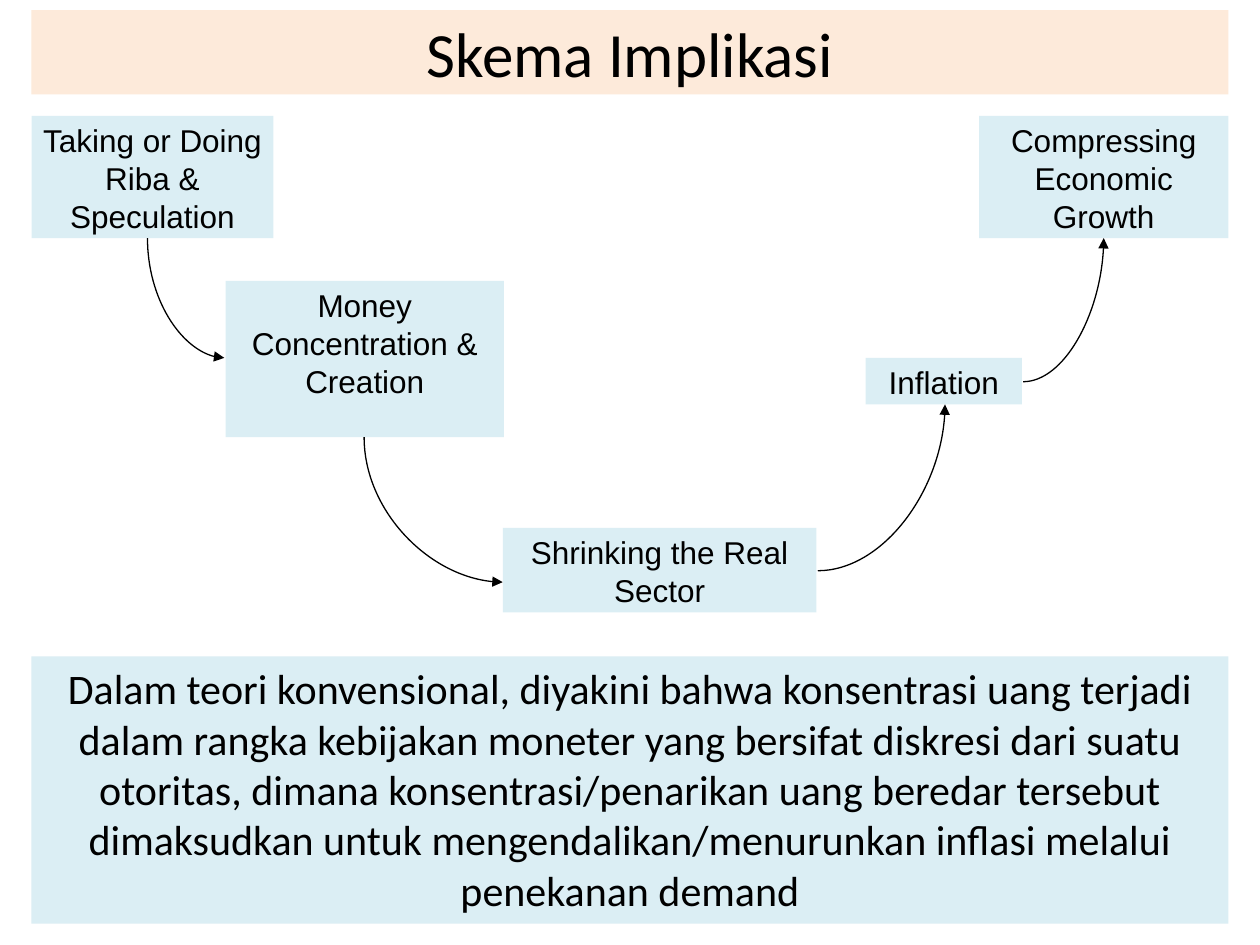
from lxml import etree
from pptx import Presentation
from pptx.dml.color import RGBColor
from pptx.enum import shapes, text
from pptx.oxml import ns
from pptx.util import Inches, Pt

HUES = {"peach": "FDEADA", "aqua": "DBEEF4", "ink": "000000"}
SIDE, WIDE = 0.25, 9.5
STEPS = [
    ("Taking or Doing Riba & Speculation", 0, 0, 1.92, 0.97),
    ("Money Concentration & Creation", 1.54, 1.31, 2.21, 1.24),
    ("Shrinking the Real Sector", 3.74, 3.27, 2.49, 0.67),
    ("Inflation", 6.62, 1.92, 1.24, 0.37),
    ("Compressing Economic Growth", 7.52, 0, 1.98, 0.97),
]
FALLS = [(0.92, 0.97, 1.53, 1.92), (2.64, 2.55, 3.74, 3.7)]
RISES = [(6.24, 3.61, 7.25, 2.29), (7.87, 2.11, 8.51, 0.97)]
NOTE = (
    "Dalam teori konvensional, diyakini bahwa konsentrasi uang terjadi dalam "
    "rangka kebijakan moneter yang bersifat diskresi dari suatu otoritas, dimana "
    "konsentrasi/penarikan uang beredar tersebut dimaksudkan untuk "
    "mengendalikan/menurunkan inflasi melalui penekanan demand"
)


def panel(slide, words, box, hue, font, size, pad=(0.1, 0.05), anchor="TOP"):
    """Add a filled box with centred text."""
    shape = slide.shapes.add_shape(
        shapes.MSO_SHAPE.RECTANGLE, *[Inches(v) for v in box])
    shape.shadow.inherit = False
    shape.fill.solid()
    shape.fill.fore_color.rgb = RGBColor.from_string(HUES[hue])
    shape.line.fill.background()
    frame = shape.text_frame
    frame.word_wrap = True
    frame.vertical_anchor = text.MSO_ANCHOR[anchor]
    frame.margin_left = frame.margin_right = Inches(pad[0])
    frame.margin_top = frame.margin_bottom = Inches(pad[1])
    frame.text = words
    para = frame.paragraphs[0]
    para.alignment = text.PP_ALIGN.CENTER
    face = para.runs[0].font
    face.name, face.size = font, Pt(size)
    face.color.rgb = RGBColor.from_string(HUES["ink"])


def curve(slide, ends):
    """Add a quarter curve that leaves sideways and ends in an arrowhead."""
    link = slide.shapes.add_connector(
        shapes.MSO_CONNECTOR.CURVE, *[Inches(v) for v in ends])
    link.line.color.rgb = RGBColor.from_string(HUES["ink"])
    link.line.width = Pt(0.75)
    props = link._element.spPr
    props.find(ns.qn("a:prstGeom")).set("prst", "curvedConnector2")
    etree.SubElement(props.find(ns.qn("a:ln")), ns.qn("a:tailEnd"), type="triangle")
    etree.SubElement(props, ns.qn("a:effectLst"))
    return link


def drop(slide, ends):
    """Add a curve that leaves downwards, as a flipped curve turned by 270 degrees."""
    x1, y1, x2, y2 = ends
    midx, midy = (x1 + x2) / 2, (y1 + y2) / 2
    halfw, halfh = (y2 - y1) / 2, (x2 - x1) / 2
    link = curve(slide, (midx + halfw, midy - halfh, midx - halfw, midy + halfh))
    link._element.spPr.find(ns.qn("a:xfrm")).set("rot", str(270 * 60000))


def scheme(slide, left, top):
    """Place the chain of steps and its arrows from the given corner."""
    for words, x, y, wide, high in STEPS:
        panel(slide, words, (left + x, top + y, wide, high),
              "aqua", "Arial", 18, (0.07, 0.04))
    for draw, links in ((drop, FALLS), (curve, RISES)):
        for x1, y1, x2, y2 in links:
            draw(slide, (left + x1, top + y1, left + x2, top + y2))


def main():
    """Build and save the slide."""
    deck = Presentation()
    deck.slide_width, deck.slide_height = Inches(10), Inches(7.5)
    slide = deck.slides.add_slide(deck.slide_layouts[6])
    panel(slide, "Skema Implikasi", (SIDE, 0.08, WIDE, 0.67),
          "peach", "Calibri", 36, anchor="MIDDLE")
    scheme(slide, SIDE, 0.92)
    panel(slide, NOTE, (SIDE, 5.21, WIDE, 2.12), "aqua", "Calibri", 24)
    deck.save("out.pptx")


if __name__ == "__main__":
    main()
